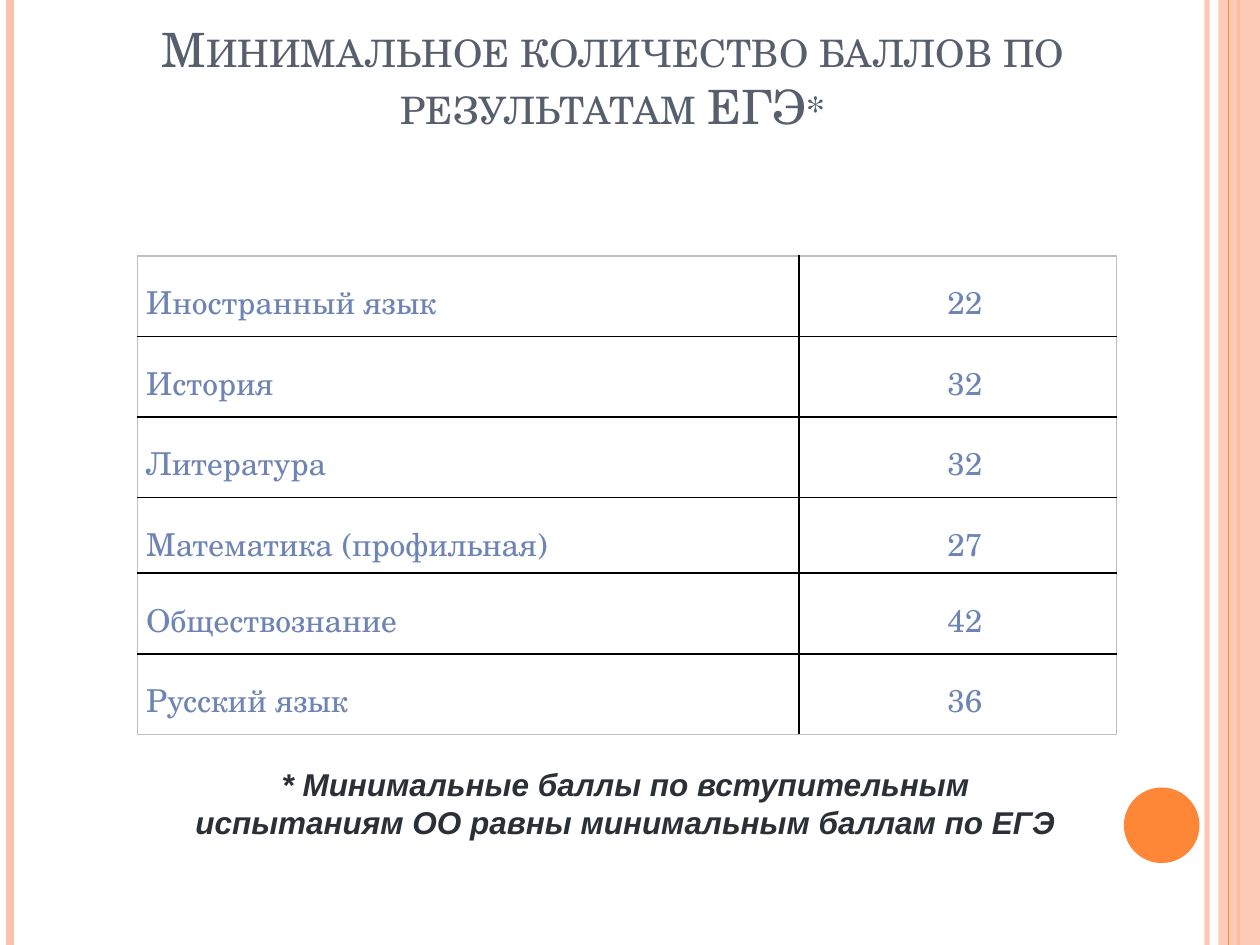
from typing import NamedTuple

from lxml import etree
from pptx import Presentation
from pptx.dml.color import RGBColor
from pptx.enum.shapes import MSO_CONNECTOR, MSO_SHAPE
from pptx.enum.text import MSO_ANCHOR, PP_ALIGN
from pptx.oxml.ns import qn
from pptx.util import Inches, Pt

LINE = MSO_CONNECTOR.STRAIGHT
RECT, OVAL = MSO_SHAPE.RECTANGLE, MSO_SHAPE.OVAL
TOP, LOW = MSO_ANCHOR.TOP, MSO_ANCHOR.BOTTOM
LEFT, MID = PP_ALIGN.LEFT, PP_ALIGN.CENTER

WIDE, HIGH = 10, 7.5
SERIF, SANS = "TeX Gyre Schola", "Arial"
HEX = {
    "peach": "FEC3AE", "orange": "FE8637", "slate": "575F6D",
    "blue": "6E84B4", "ink": "2B2F36", "black": "000000", "grey": "BFBFBF",
}


class Stripe(NamedTuple):
    x: float
    color: str
    width: float
    alpha: int = 100


class Score(NamedTuple):
    subject: str
    points: int


class Box(NamedTuple):
    x: float
    y: float
    w: float
    h: float

    def emu(self) -> list:
        return [Inches(v) for v in self]


STRIPES = [
    Stripe(9.58, "peach", 3, 93),
    Stripe(0.08, "peach", 4.5),
    Stripe(9.83, "orange", 1.5),
]
EDGE = Stripe(9.75, "orange", 0.75)
SCORES = [
    Score("Иностранный язык", 22),
    Score("История", 32),
    Score("Литература", 32),
    Score("Математика (профильная)", 27),
    Score("Обществознание", 42),
    Score("Русский язык", 36),
]
COLS = [5.25, 2.52]
ROWS = [0.6 if s.subject.startswith("Мат") else 0.64 for s in SCORES]


def rgb(name: str) -> RGBColor:
    return RGBColor.from_string(HEX[name])


def fade(props, alpha: int) -> None:
    """Set the opacity of the solid fill inside an element."""
    if alpha < 100:
        tint = next(props.iter(qn("a:srgbClr")))
        etree.SubElement(tint, qn("a:alpha"), val=str(alpha * 1000))


def write(frame, text: str, *, size=18, font=SERIF, color="blue", align=LEFT,
          bold=False, italic=False, small=False, space=1.0, indent=0.0) -> None:
    para = frame.paragraphs[0]
    para.alignment = align
    para.line_spacing = space
    if indent:
        para._p.get_or_add_pPr().set("marL", str(Inches(indent)))
    run = para.add_run()
    run.text = text
    run.font.name = font
    run.font.size = Pt(size)
    run.font.bold = bold
    run.font.italic = italic
    run.font.color.rgb = rgb(color)
    if small:
        run.font._element.set("cap", "small")


def label(slide, box: Box, text: str, anchor=TOP, gap=0.05, **style) -> None:
    frame = slide.shapes.add_textbox(*box.emu()).text_frame
    frame.word_wrap = True
    frame.vertical_anchor = anchor
    frame.margin_bottom = Inches(gap)
    write(frame, text, **style)


def stripe(slide, item: Stripe) -> None:
    x = Inches(item.x)
    line = slide.shapes.add_connector(LINE, x, 0, x, Inches(HIGH))
    line.line.color.rgb = rgb(item.color)
    line.line.width = Pt(item.width)
    props = line._element.spPr
    fade(props, item.alpha)
    etree.SubElement(props, qn("a:effectLst"))


def block(slide, kind, box: Box, color: str, alpha: int = 100) -> None:
    shape = slide.shapes.add_shape(kind, *box.emu())
    shape.shadow.inherit = False
    shape.fill.solid()
    shape.fill.fore_color.rgb = rgb(color)
    shape.line.fill.background()
    fade(shape._element.spPr, alpha)


def border(cell, sides: dict) -> None:
    props = cell._tc.get_or_add_tcPr()
    for spot, (side, color) in enumerate(sides.items()):
        line = etree.Element(qn(f"a:ln{side}"), w=str(Pt(1)))
        fill = etree.SubElement(line, qn("a:solidFill"))
        etree.SubElement(fill, qn("a:srgbClr"), val=HEX[color])
        props.insert(spot, line)


def grid(slide, x: float, y: float) -> None:
    box = Box(x, y, sum(COLS), sum(ROWS))
    table = slide.shapes.add_table(len(ROWS), len(COLS), *box.emu()).table
    table.first_row = table.horz_banding = False
    for col, width in zip(table.columns, COLS):
        col.width = Inches(width)
    for r, (score, height) in enumerate(zip(SCORES, ROWS)):
        table.rows[r].height = Inches(height)
        for c, value in enumerate(score):
            cell = table.cell(r, c)
            cell.fill.background()
            cell.margin_left = cell.margin_right = Inches(0.07)
            cell.margin_top = cell.margin_bottom = 0
            write(cell.text_frame, str(value), space=1.5, indent=1.11 * c)
            # Grey outside, black inside
            outer = {"L": c == 0, "R": c == len(COLS) - 1,
                     "T": r == 0, "B": r == len(ROWS) - 1}
            border(cell, {k: "grey" if v else "black" for k, v in outer.items()})


def main() -> None:
    deck = Presentation()
    deck.slide_width, deck.slide_height = Inches(WIDE), Inches(HIGH)
    slide = deck.slides.add_slide(deck.slide_layouts[6])

    # Side stripes and disc
    for item in STRIPES:
        stripe(slide, item)
    block(slide, RECT, Box(9.67, 0, 0.33, HIGH), "peach", 87)
    stripe(slide, EDGE)
    block(slide, OVAL, Box(8.92, 6.25, 0.6, 0.6), "orange")

    # Title
    label(slide, Box(0.78, 0.31, 8.17, 1.25),
          "Минимальное количество баллов по результатам ЕГЭ*",
          anchor=LOW, gap=0.5, size=27, color="slate", align=MID, small=True)

    # Scores
    grid(slide, 1.09, 2.03)

    # Footnote
    label(slide, Box(1.33, 6.02, 7.27, 0.71),
          "* Минимальные баллы по вступительным испытаниям ОО равны "
          "минимальным баллам по ЕГЭ",
          font=SANS, color="ink", align=MID, bold=True, italic=True)

    deck.save("out.pptx")


if __name__ == "__main__":
    main()
